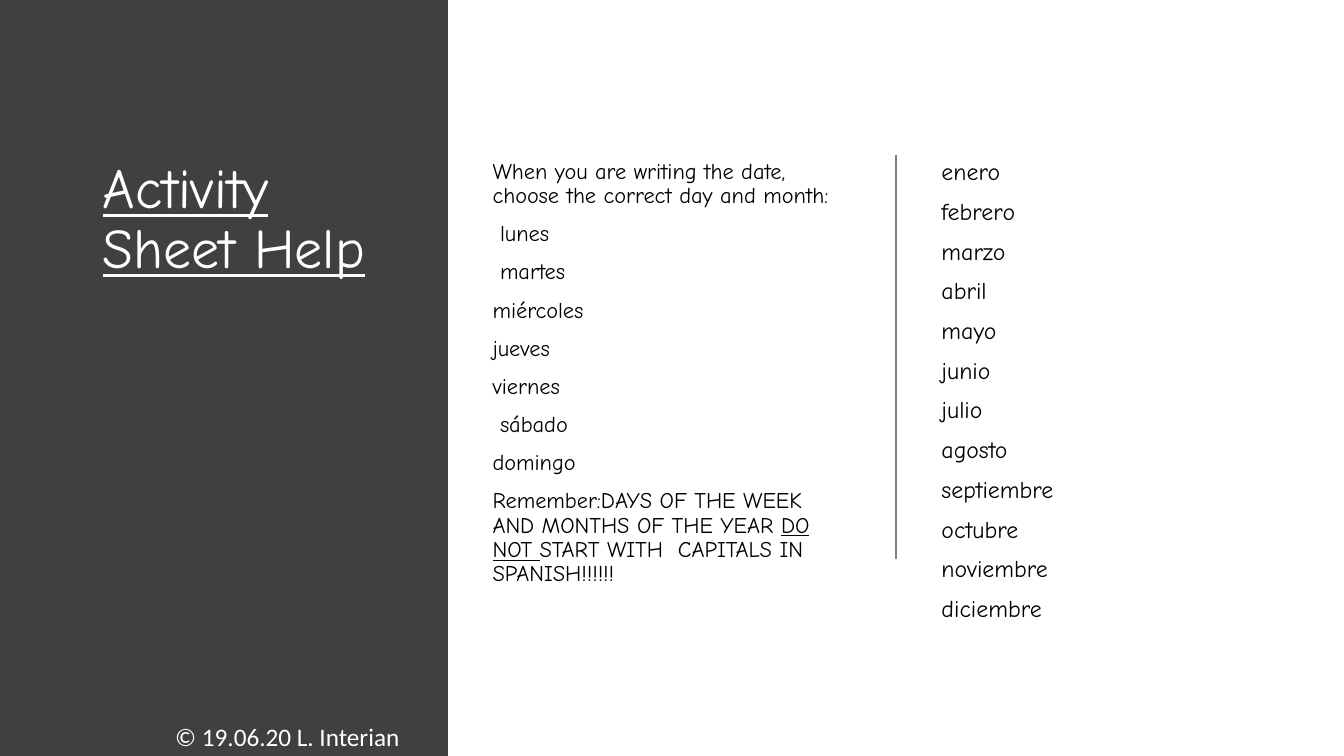
import dataclasses
import typing

import lxml.etree
import pptx
import pptx.dml.color
import pptx.enum.shapes
import pptx.enum.text
import pptx.oxml.ns
import pptx.util

RGB = pptx.dml.color.RGBColor
Pt = pptx.util.Pt
Text = pptx.enum.text


@dataclasses.dataclass(frozen=True)
class Theme:
    dark: RGB = RGB(0x40, 0x40, 0x40)
    rule: RGB = RGB(0x80, 0x80, 0x80)
    white: RGB = RGB(0xFF, 0xFF, 0xFF)
    black: RGB = RGB(0, 0, 0)
    hand: str = "Comic Neue"
    plain: str = "Calibri"
    head: int = 40
    days: int = 16
    months: int = 17
    note: int = 18


class Box(typing.NamedTuple):
    left: float
    top: float
    width: float
    height: float


class Run(typing.NamedTuple):
    text: str
    under: bool = False


@dataclasses.dataclass(frozen=True)
class Block:
    box: Box
    lines: list[list[Run]]
    size: int
    color: RGB
    font: str
    space: int = 0
    lead: float = 0.9
    wrap: bool = True


THEME = Theme()
WIDE, HIGH = pptx.util.Inches(13.33), pptx.util.Inches(7.5)
TOP, TALL = 20.5, 63.6
SIDE = 100 / 3
DAYS = [" lunes", " martes", "miércoles", "jueves", "viernes", " sábado", "domingo"]
MONTHS = ["enero", "febrero", "marzo", "abril", "mayo", "junio", "julio",
          "agosto", "septiembre", "octubre", "noviembre", "diciembre"]


def plain(lines: list[str]) -> list[list[Run]]:
    return [[Run(line)] for line in lines]


TITLE = Block(Box(6.9, TOP, 23.8, TALL), [[Run("Activity Sheet Help", True)]],
              THEME.head, THEME.white, THEME.hand)
WEEK = Block(
    Box(35.9, TOP, 28.1, TALL),
    plain(["When you are writing the date, choose the correct day and month:", *DAYS])
    + [[Run("Remember:DAYS OF THE WEEK AND MONTHS OF THE YEAR "),
        Run("DO NOT ", True),
        Run("START WITH  CAPITALS IN SPANISH!!!!!!")]],
    THEME.days, THEME.black, THEME.hand, 10)
YEAR = Block(Box(69.3, TOP, 26.3, TALL), plain(MONTHS),
             THEME.months, THEME.black, THEME.hand, 10)
NOTE = Block(Box(12.3, 94.7, 18.4, 5.3), plain(["© 19.06.20 L. Interian"]),
             THEME.note, THEME.white, THEME.plain, lead=1.0, wrap=False)


def across(share: float) -> int:
    return round(WIDE * share / 100)


def down(share: float) -> int:
    return round(HIGH * share / 100)


def apply(item: typing.Any, form: dict[str, typing.Any]) -> None:
    for name, value in form.items():
        setattr(item, name, value)


def place(box: Box) -> dict[str, int]:
    return {"left": across(box.left), "top": down(box.top),
            "width": across(box.width), "height": down(box.height)}


def nest(parent: typing.Any, tag: str) -> None:
    lxml.etree.SubElement(parent, pptx.oxml.ns.qn(tag))


def write(shape: typing.Any, block: Block) -> None:
    apply(shape, place(block.box))
    frame = shape.text_frame
    apply(frame, {"word_wrap": block.wrap, "auto_size": Text.MSO_AUTO_SIZE.NONE,
                  "vertical_anchor": Text.MSO_ANCHOR.TOP})
    for index, line in enumerate(block.lines):
        para = frame.add_paragraph() if index else frame.paragraphs[0]
        apply(para, {"alignment": Text.PP_ALIGN.LEFT, "line_spacing": block.lead,
                     "space_before": Pt(block.space), "space_after": Pt(0)})
        props = para._p.get_or_add_pPr()
        props.set("marL", "0")
        props.set("indent", "0")
        nest(props, "a:buNone")
        for part in line:
            run = para.add_run()
            run.text = part.text
            apply(run.font, {"name": block.font, "size": Pt(block.size),
                             "underline": part.under})
            run.font.color.rgb = block.color


def panel(slide: typing.Any) -> None:
    shape = slide.shapes.add_shape(pptx.enum.shapes.MSO_SHAPE.RECTANGLE,
                                   *place(Box(0, 0, SIDE, 100)).values())
    shape.shadow.inherit = False
    shape.fill.solid()
    shape.fill.fore_color.rgb = THEME.dark
    shape.line.fill.background()
    slide.shapes.element.insert(2, shape.element)


def rule(slide: typing.Any) -> None:
    left = across(2 * SIDE)
    line = slide.shapes.add_connector(pptx.enum.shapes.MSO_CONNECTOR.STRAIGHT,
                                      left, down(TOP), left, down(73.9))
    line.line.color.rgb = THEME.rule
    line.line.width = Pt(1)
    nest(line.element.find(pptx.oxml.ns.qn("p:spPr")), "a:effectLst")


def main() -> None:
    deck = pptx.Presentation()
    apply(deck, {"slide_width": WIDE, "slide_height": HIGH})
    slide = deck.slides.add_slide(deck.slide_layouts[3])
    for shape, block in zip(slide.placeholders, [TITLE, WEEK, YEAR]):
        write(shape, block)
    panel(slide)
    rule(slide)
    write(slide.shapes.add_textbox(*place(NOTE.box).values()), NOTE)
    deck.save("out.pptx")


if __name__ == "__main__":
    main()
